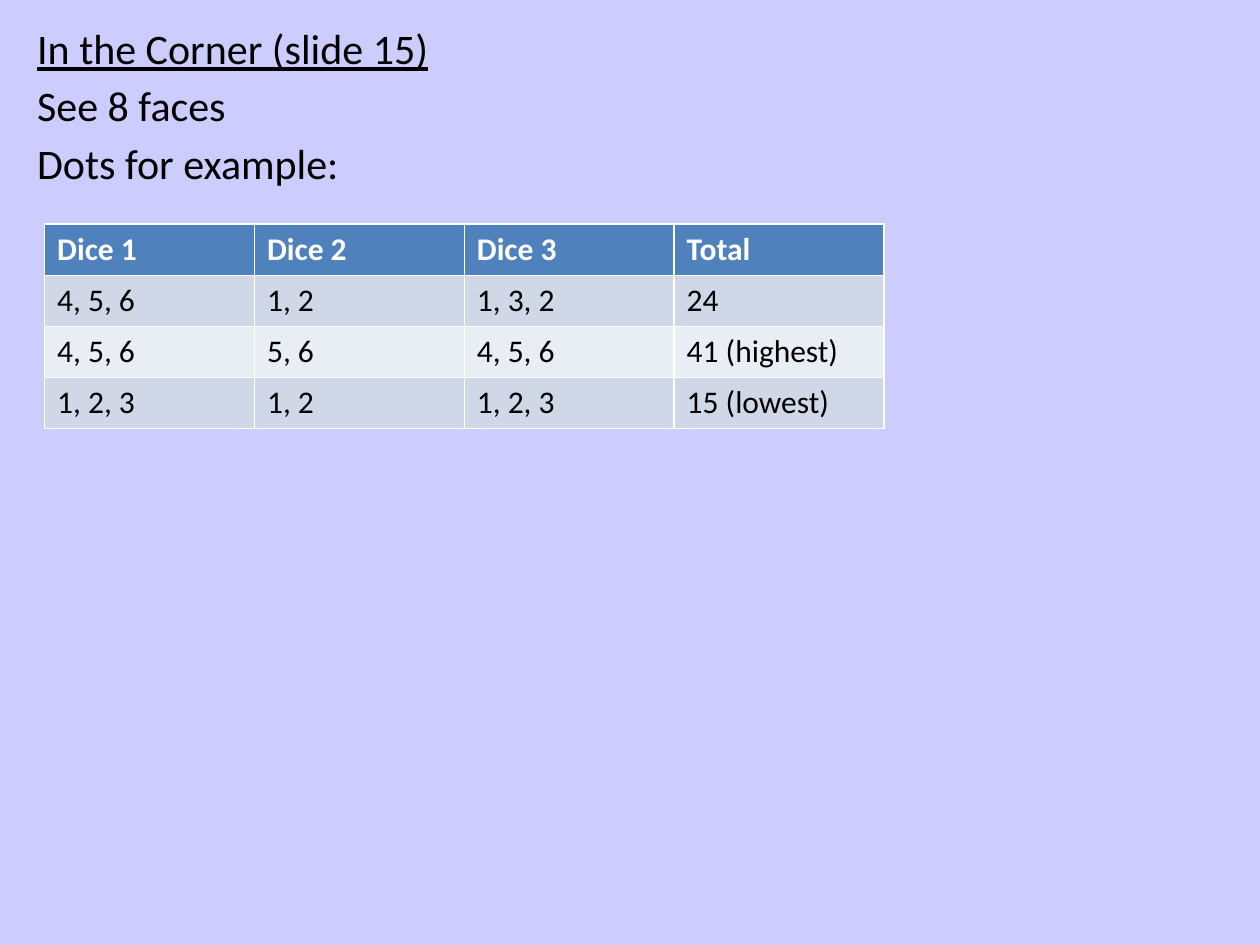
from pptx import Presentation
from pptx.dml.color import RGBColor
from pptx.util import Cm, Pt

# Content
HEADING = "In the Corner (slide 15)"
LINES = [HEADING, "See 8 faces", "Dots for example:"]
DICE_ROWS = [
    ("Dice 1", "Dice 2", "Dice 3", "Total"),
    ("4, 5, 6", "1, 2", "1, 3, 2", "24"),
    ("4, 5, 6", "5, 6", "4, 5, 6", "41 (highest)"),
    ("1, 2, 3", "1, 2", "1, 2, 3", "15 (lowest)"),
]

FONT = "Calibri"
LAVENDER = RGBColor(0xCC, 0xCC, 0xFF)
BLACK = RGBColor(0, 0, 0)
WHITE = RGBColor(0xFF, 0xFF, 0xFF)
HEADER_BLUE = RGBColor(0x4F, 0x81, 0xBD)
BANDS = [RGBColor(0xE9, 0xED, 0xF4), RGBColor(0xD0, 0xD8, 0xE8)]

COLUMN_WIDTH = Cm(4.23)
ROW_HEIGHT = Cm(1.03)


def set_font(paragraph, size, color):
    paragraph.font.name = FONT
    paragraph.font.size = Pt(size)
    paragraph.font.color.rgb = color


presentation = Presentation()
presentation.slide_width = Cm(25.4)
presentation.slide_height = Cm(19.05)
slide = presentation.slides.add_slide(presentation.slide_layouts[6])
slide.background.fill.solid()
slide.background.fill.fore_color.rgb = LAVENDER

# Introductory lines
text_box = slide.shapes.add_textbox(Cm(0.5), Cm(0.33), Cm(24.4), Cm(9))
text_frame = text_box.text_frame
text_frame.word_wrap = True
text_frame.text = "\n".join(LINES)
for paragraph in text_frame.paragraphs:
    set_font(paragraph, 24, BLACK)
    paragraph.space_before = Pt(4)
    paragraph.font.underline = paragraph.text == HEADING

# Dice table: the default table style supplies the white borders
row_count, column_count = len(DICE_ROWS), len(DICE_ROWS[0])
table = slide.shapes.add_table(
    row_count, column_count, Cm(0.9), Cm(4.52),
    COLUMN_WIDTH * column_count, ROW_HEIGHT * row_count).table
for column in table.columns:
    column.width = COLUMN_WIDTH
for row_index, values in enumerate(DICE_ROWS):
    is_header = row_index == 0
    table.rows[row_index].height = ROW_HEIGHT
    for column_index, value in enumerate(values):
        cell = table.cell(row_index, column_index)
        cell.text = value
        cell.fill.solid()
        cell.fill.fore_color.rgb = HEADER_BLUE if is_header else BANDS[row_index % 2]
        paragraph = cell.text_frame.paragraphs[0]
        set_font(paragraph, 18, WHITE if is_header else BLACK)
        paragraph.font.bold = is_header

presentation.save("out.pptx")
